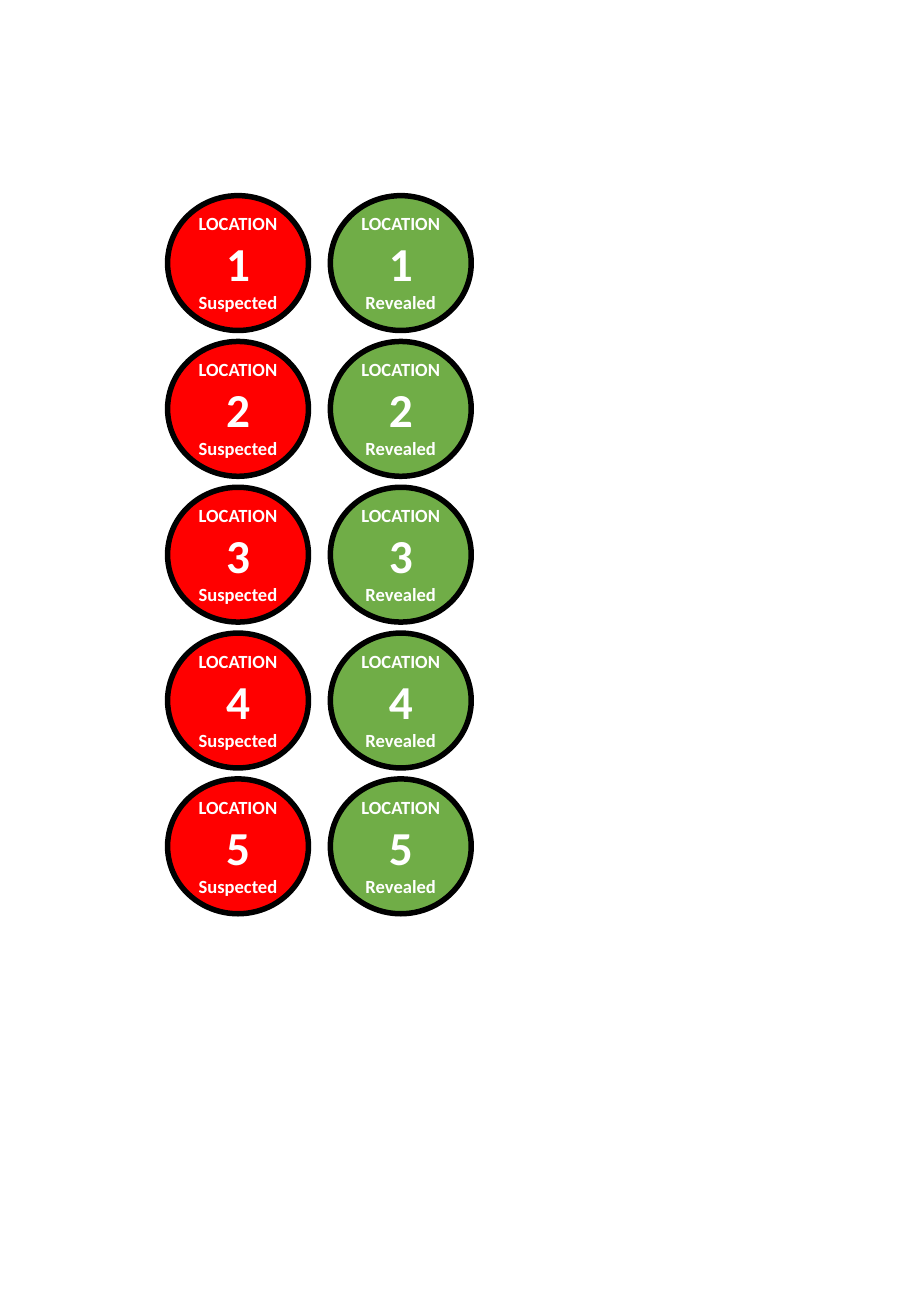
import dataclasses

import pptx
import pptx.dml.color
import pptx.enum.shapes
import pptx.enum.text
import pptx.slide
import pptx.util

Inches = pptx.util.Inches
Pt = pptx.util.Pt

COLOURS = {
    "suspected": "FF0000",
    "revealed": "70AD47",
    "outline": "000000",
    "text": "FFFFFF",
}
LOCATION_COUNT = 5
FIRST_TOP = 1.61
ROW_PITCH = 1.2
TOKEN_WIDTH = 1.16
TOKEN_HEIGHT = 1.11
LABEL_SIZE = 11
NUMBER_SIZE = 28

TOKEN_FRAME_FORMAT = {
    "margin_left": 0,
    "margin_top": 0,
    "margin_right": 0,
    "margin_bottom": 0,
    "word_wrap": True,
    "vertical_anchor": pptx.enum.text.MSO_ANCHOR.MIDDLE,
}
TOKEN_FONT_FORMAT = {"name": "Calibri", "bold": True}


@dataclasses.dataclass(frozen=True)
class TokenColumn:
    status: str
    left: float
    colour: str


TOKEN_COLUMNS = (
    TokenColumn("Suspected", 1.38, "suspected"),
    TokenColumn("Revealed", 2.72, "revealed"),
)


def rgb(colour: str) -> pptx.dml.color.RGBColor:
    return pptx.dml.color.RGBColor.from_string(COLOURS[colour])


def apply_format(target: object, values: dict[str, object]) -> None:
    for attribute, value in values.items():
        setattr(target, attribute, value)


def add_token(slide: pptx.slide.Slide, column: TokenColumn, number: int) -> None:
    token = slide.shapes.add_shape(
        pptx.enum.shapes.MSO_SHAPE.OVAL,
        Inches(column.left),
        Inches(FIRST_TOP + (number - 1) * ROW_PITCH),
        Inches(TOKEN_WIDTH),
        Inches(TOKEN_HEIGHT),
    )
    token.shadow.inherit = False
    token.fill.solid()
    token.fill.fore_color.rgb = rgb(column.colour)
    token.line.color.rgb = rgb("outline")
    token.line.width = Pt(3.25)

    frame = token.text_frame
    apply_format(frame, TOKEN_FRAME_FORMAT)
    sizes = (LABEL_SIZE, NUMBER_SIZE, LABEL_SIZE)
    frame.text = "\n".join(("LOCATION", str(number), column.status))
    for paragraph, size in zip(frame.paragraphs, sizes):
        paragraph.alignment = pptx.enum.text.PP_ALIGN.CENTER
        font = paragraph.runs[0].font
        apply_format(font, TOKEN_FONT_FORMAT | {"size": Pt(size)})
        font.color.rgb = rgb("text")


def main() -> None:
    presentation = pptx.Presentation()
    presentation.slide_width = Inches(7.5)
    presentation.slide_height = Inches(10.83)
    blank_layout = presentation.slide_layouts.get_by_name("Blank")
    slide = presentation.slides.add_slide(blank_layout)
    for column in TOKEN_COLUMNS:
        for number in range(1, LOCATION_COUNT + 1):
            add_token(slide, column, number)
    presentation.save("out.pptx")


if __name__ == "__main__":
    main()
